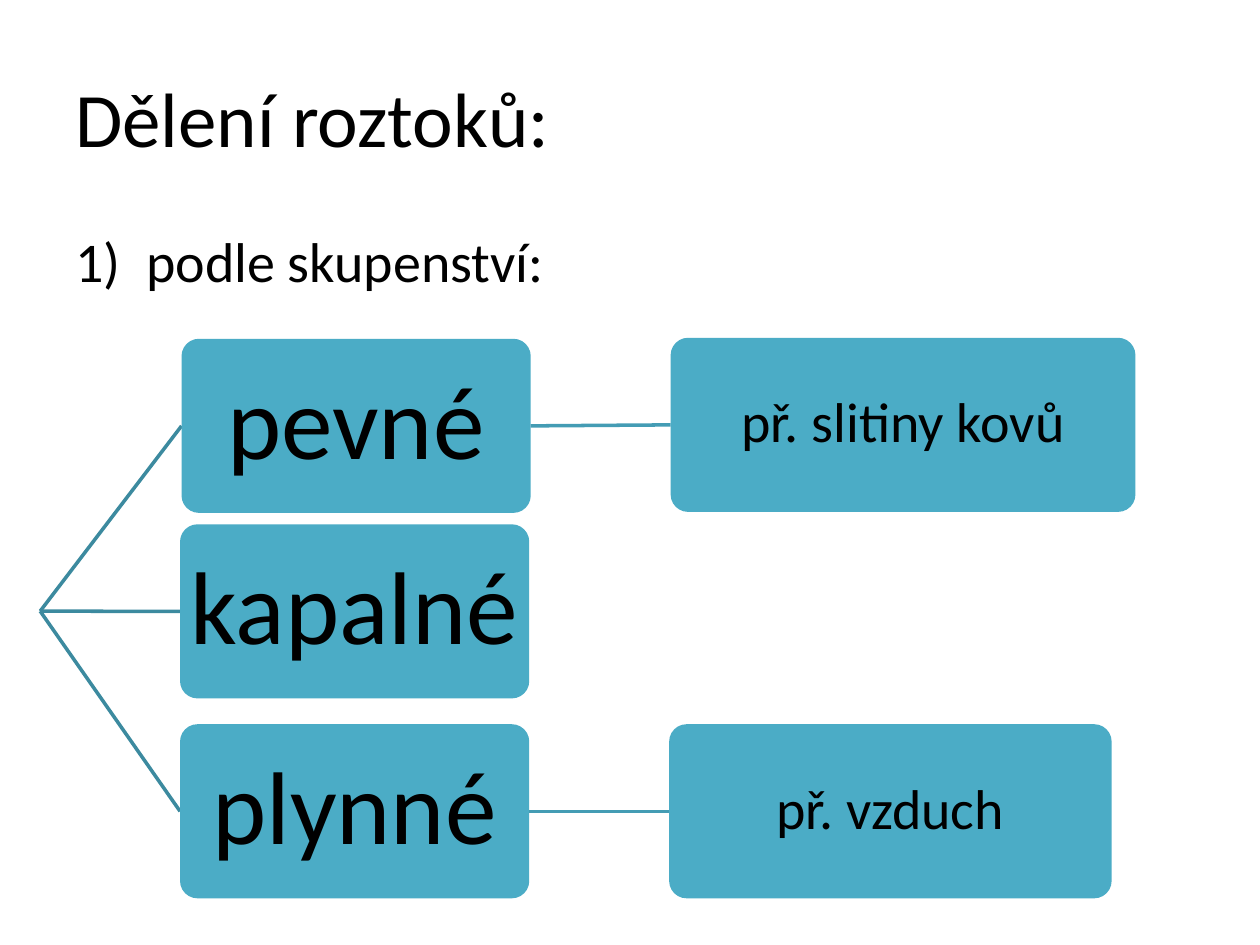
import pptx
import pptx.util
import pptx.dml.color
import pptx.enum.shapes
import pptx.enum.text
import pptx.oxml.ns
import lxml.etree

Cm, Pt = pptx.util.Cm, pptx.util.Pt
ALIGN = pptx.enum.text.PP_ALIGN
ANCHOR = pptx.enum.text.MSO_ANCHOR

TITLE = "Dělení roztoků:"
SUBTITLE = "podle skupenství:"
# state, left, top, then its example: text, top, width
BRANCHES = [
    ("pevné", 3.66, 6.83, ("př. slitiny kovů", 6.81, 9.37)),
    ("kapalné", 3.63, 10.57, None),
    ("plynné", 3.63, 14.6, ("př. vzduch", 14.6, 8.92)),
]
ROOT = (0.81, 12.32)
STATE_WIDTH, BOX_HEIGHT, GAP = 7.04, 3.51, 2.82
BOX_FILL, BRANCH_LINE, EXAMPLE_LINE, TEXT = "4BACC6", "3C8A9F", "449CB4", "000000"


def color(value):
    return pptx.dml.color.RGBColor.from_string(value)


def apply(target, values):
    for name, value in values.items():
        setattr(target, name, value)


def write(shape, text, size, frame_format, paragraph_format):
    apply(shape.text_frame, frame_format)
    paragraph = shape.text_frame.paragraphs[0]
    apply(paragraph, paragraph_format)
    run = paragraph.add_run()
    run.text = text
    apply(run.font, {"name": "Calibri", "size": Pt(size)})
    run.font.color.rgb = color(TEXT)
    return paragraph


def add_text(slide, box, text, size, anchor):
    shape = slide.shapes.add_textbox(*map(Cm, box))
    return write(shape, text, size,
                 {"word_wrap": True, "vertical_anchor": anchor},
                 {"alignment": ALIGN.LEFT})


def number(paragraph, indent):
    """Give the paragraph a hanging number such as 1)."""
    properties = paragraph._p.get_or_add_pPr()
    properties.set("marL", str(Cm(indent)))
    properties.set("indent", str(-Cm(indent)))
    lxml.etree.SubElement(properties, pptx.oxml.ns.qn("a:buFont"), typeface="+mj-lt")
    lxml.etree.SubElement(properties, pptx.oxml.ns.qn("a:buAutoNum"), type="arabicParenR")


def add_line(slide, start, end, line_color):
    line = slide.shapes.add_connector(
        pptx.enum.shapes.MSO_CONNECTOR.STRAIGHT, *map(Cm, start + end))
    line.line.color.rgb = color(line_color)
    line.line.width = Pt(2)
    lxml.etree.SubElement(line._element.spPr, pptx.oxml.ns.qn("a:effectLst"))


def add_box(slide, left, top, width, text, size, margin):
    shape = slide.shapes.add_shape(
        pptx.enum.shapes.MSO_SHAPE.ROUNDED_RECTANGLE,
        *map(Cm, (left, top, width, BOX_HEIGHT)))
    shape.adjustments[0] = 0.1
    shape.shadow.inherit = False
    shape.fill.solid()
    shape.fill.fore_color.rgb = color(BOX_FILL)
    shape.line.fill.background()
    sides = ("left", "top", "right", "bottom")
    frame_format = {f"margin_{side}": Cm(margin) for side in sides}
    frame_format |= {"word_wrap": False, "vertical_anchor": ANCHOR.MIDDLE}
    write(shape, text, size, frame_format,
          {"alignment": ALIGN.CENTER, "line_spacing": 0.9})


def main():
    presentation = pptx.Presentation()
    apply(presentation, {"slide_width": Cm(25.4), "slide_height": Cm(19.05)})
    slide = presentation.slides.add_slide(presentation.slide_layouts[6])

    add_text(slide, (1.27, 0.76, 22.86, 3.18), TITLE, 44, ANCHOR.MIDDLE)
    subtitle = add_text(slide, (1.27, 4.45, 22.86, 1.8), SUBTITLE, 32, ANCHOR.TOP)
    number(subtitle, 1.43)

    for state, left, top, example in BRANCHES:
        middle = top + BOX_HEIGHT / 2
        right = left + STATE_WIDTH
        add_line(slide, ROOT, (left, middle), BRANCH_LINE)
        add_box(slide, left, top, STATE_WIDTH, state, 59, 0.1)
        if example:
            text, example_top, width = example
            example_left = right + GAP
            example_middle = example_top + BOX_HEIGHT / 2
            add_line(slide, (right, middle), (example_left, example_middle), EXAMPLE_LINE)
            add_box(slide, example_left, example_top, width, text, 32, 0.05)

    presentation.save("out.pptx")


if __name__ == "__main__":
    main()
